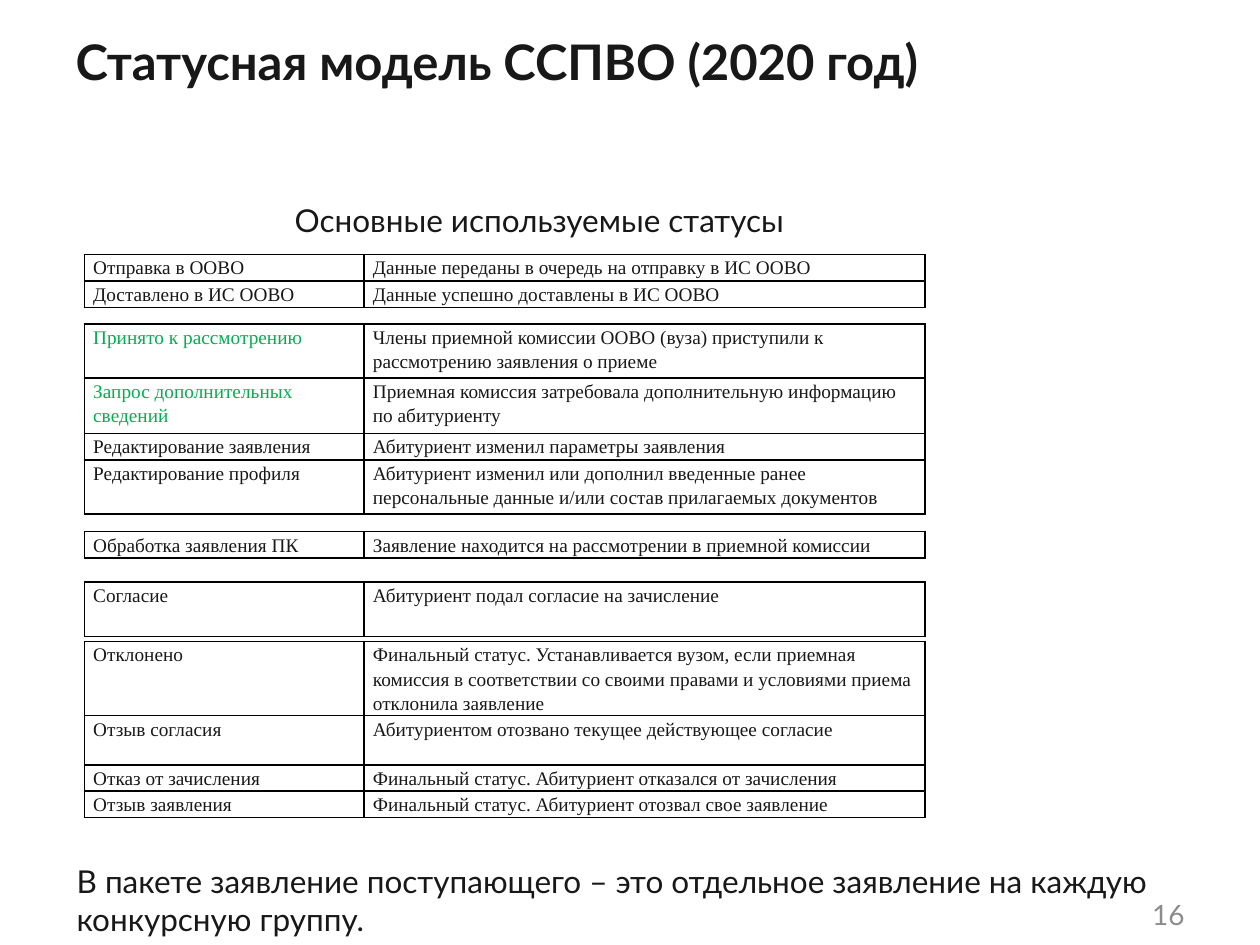
from typing import NamedTuple

from lxml import etree
from pptx import Presentation
from pptx.dml.color import RGBColor
from pptx.enum import text
from pptx.oxml import ns
from pptx.util import Inches, Pt

INK = RGBColor(0x18, 0x18, 0x18)
GREEN = RGBColor(0x00, 0xB0, 0x50)
GRAY = RGBColor(0x8C, 0x8C, 0x8C)
HEADING_FONT = "Lato"
TABLE_FONT = "Times New Roman"

TABLE_LEFT = 0.67
COLUMN_WIDTHS = (2.22, 4.45)
ONE_LINE, TWO_LINES, THREE_LINES = 0.21, 0.43, 0.59


class Status(NamedTuple):
    name: str
    meaning: str
    height: float = ONE_LINE
    color: RGBColor = INK


class StatusGroup(NamedTuple):
    top: float
    statuses: list[Status]


class Label(NamedTuple):
    box: tuple[float, float, float, float]
    words: str
    size: int = 18
    color: RGBColor = INK
    align: text.PP_ALIGN = text.PP_ALIGN.LEFT
    anchor: text.MSO_ANCHOR = text.MSO_ANCHOR.TOP
    wrap: bool = True


GROUPS = [
    StatusGroup(2.02, [
        Status("Отправка в ООВО", "Данные переданы в очередь на отправку в ИС ООВО"),
        Status("Доставлено в ИС ООВО", "Данные успешно доставлены в ИС ООВО"),
    ]),
    StatusGroup(2.57, [
        Status("Принято к рассмотрению",
               "Члены приемной комиссии ООВО (вуза) приступили к рассмотрению "
               "заявления о приеме", TWO_LINES, GREEN),
        Status("Запрос дополнительных сведений",
               "Приемная комиссия затребовала дополнительную информацию "
               "по абитуриенту", 0.44, GREEN),
        Status("Редактирование заявления", "Абитуриент изменил параметры заявления"),
        Status("Редактирование профиля",
               "Абитуриент изменил или дополнил введенные ранее персональные "
               "данные и/или состав прилагаемых документов", TWO_LINES),
    ]),
    StatusGroup(4.22, [
        Status("Обработка заявления ПК",
               "Заявление находится на рассмотрении в приемной комиссии"),
    ]),
    StatusGroup(4.62, [
        Status("Согласие", "Абитуриент подал согласие на зачисление", TWO_LINES),
    ]),
    StatusGroup(5.09, [
        Status("Отклонено",
               "Финальный статус. Устанавливается вузом, если приемная комиссия "
               "в соответствии со своими правами и условиями приема отклонила "
               "заявление", THREE_LINES),
        Status("Отзыв согласия",
               "Абитуриентом отозвано текущее действующее согласие", 0.39),
        Status("Отказ от зачисления",
               "Финальный статус. Абитуриент отказался от зачисления"),
        Status("Отзыв заявления",
               "Финальный статус. Абитуриент отозвал свое заявление"),
    ]),
]

LABELS = [
    Label((2.24, 1.55, 4.23, 0.4), "Основные используемые статусы", wrap=False),
    Label((0.51, 6.79, 8.74, 0.71),
          "В пакете заявление поступающего – это отдельное заявление на "
          "каждую конкурсную группу."),
    Label((8.94, 7.06, 0.56, 0.4), "16", 16, GRAY,
          text.PP_ALIGN.RIGHT, text.MSO_ANCHOR.MIDDLE),
]


def style_run(r, font: str, size: int, color: RGBColor, bold: bool = False) -> None:
    r.font.name = font
    r.font.size = Pt(size)
    r.font.color.rgb = color
    r.font.bold = bold


def add_borders(cell) -> None:
    tc_pr = cell._tc.get_or_add_tcPr()
    for side in ("lnL", "lnR", "lnT", "lnB"):
        ln = etree.SubElement(tc_pr, ns.qn(f"a:{side}"), w=str(Pt(1)))
        fill = etree.SubElement(ln, ns.qn("a:solidFill"))
        etree.SubElement(fill, ns.qn("a:srgbClr"), val="000000")


def fill_cell(cell, words: str, color: RGBColor) -> None:
    cell.margin_left = cell.margin_right = Inches(0.07)
    cell.margin_top = cell.margin_bottom = 0
    add_borders(cell)
    cell.fill.background()
    p = cell.text_frame.paragraphs[0]
    p.text = words
    p.line_spacing = 1.15
    style_run(p.runs[0], TABLE_FONT, 11, color)


def add_status_table(s, group: StatusGroup) -> None:
    statuses = group.statuses
    frame = s.shapes.add_table(
        len(statuses), len(COLUMN_WIDTHS), Inches(TABLE_LEFT), Inches(group.top),
        Inches(sum(COLUMN_WIDTHS)), Inches(sum(st.height for st in statuses)))
    table = frame.table
    table.first_row = table.horz_banding = False
    for column, width in zip(table.columns, COLUMN_WIDTHS):
        column.width = Inches(width)
    for row, status in zip(table.rows, statuses):
        row.height = Inches(status.height)
        fill_cell(row.cells[0], status.name, status.color)
        fill_cell(row.cells[1], status.meaning, INK)


def add_label(s, label: Label) -> None:
    tf = s.shapes.add_textbox(*map(Inches, label.box)).text_frame
    tf.word_wrap = label.wrap
    tf.vertical_anchor = label.anchor
    p = tf.paragraphs[0]
    p.text = label.words
    p.alignment = label.align
    style_run(p.runs[0], HEADING_FONT, label.size, label.color)


def set_title(s, words: str) -> None:
    title = s.shapes.title
    title.left, title.top, title.width, title.height = map(Inches, (0.5, 0.2, 9, 0.93))
    tf = title.text_frame
    tf.text = words
    tf.word_wrap = True
    tf.vertical_anchor = text.MSO_ANCHOR.TOP
    p = tf.paragraphs[0]
    p.alignment = text.PP_ALIGN.LEFT
    style_run(p.runs[0], HEADING_FONT, 28, INK, bold=True)


def main() -> None:
    prs = Presentation()
    prs.slide_width, prs.slide_height = Inches(10), Inches(7.5)
    s = prs.slides.add_slide(prs.slide_layouts[5])
    set_title(s, "Статусная модель ССПВО (2020 год)")
    for group in GROUPS:
        add_status_table(s, group)
    for label in LABELS:
        add_label(s, label)
    prs.save("out.pptx")


if __name__ == "__main__":
    main()
